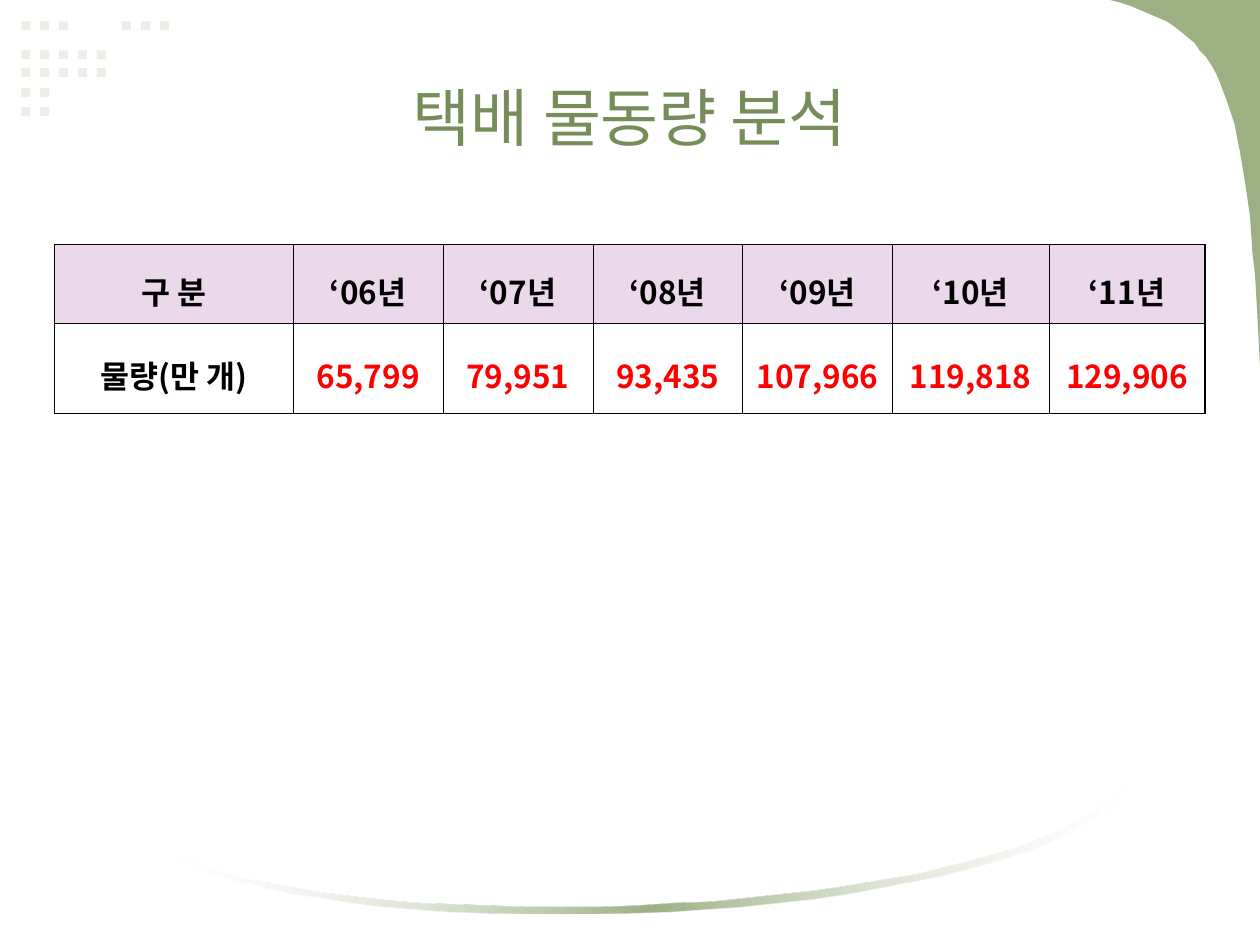
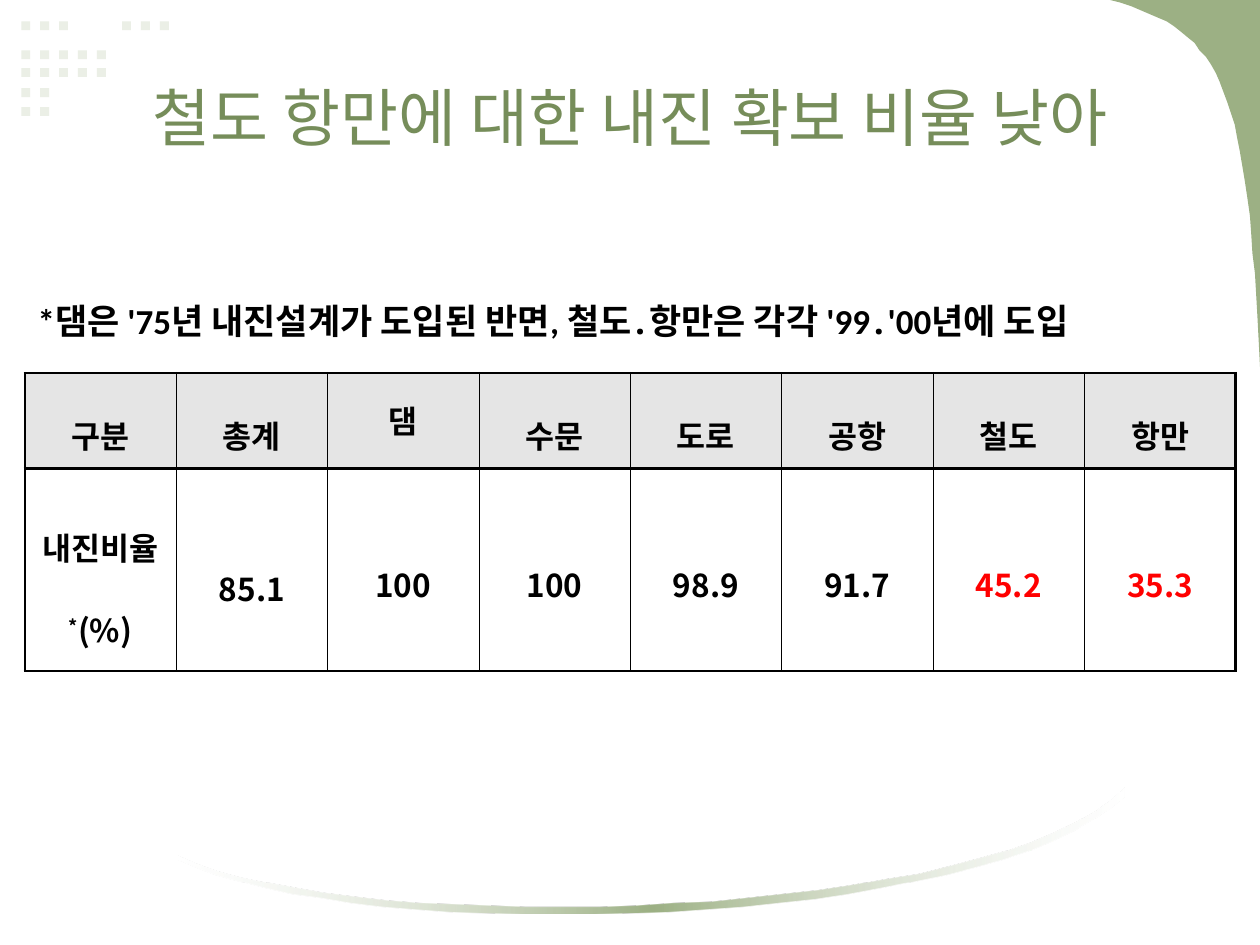
from lxml import etree
from pptx import Presentation
from pptx.dml.color import RGBColor
from pptx.enum import shapes, text
from pptx.oxml import parse_xml
from pptx.oxml.ns import nsdecls, qn
from pptx.util import Pt

# Shared style
SANS, LATIN = "Noto Sans CJK KR", "Calibri"
GREEN, PALE, OLIVE = "9CB084", "EBEFE6", "768D5A"
BLACK, RED, WHITE = "000000", "FF0000", "FFFFFF"
THIN, THICK, RULE = 0.28, 1.7, 1.98

# Content: each cell is (text, line spacing, colour)
VOLUME = {
    "title": "택배 물동량 분석",
    "at": (31, 139.7),
    "cols": [136.6] + [85.6] * 4 + [89.4] * 2,
    "rows": [45, 51.4],
    "head": "ECD8EB",
    "lines": {"L": THIN, "R": THICK, "T": THIN, "B": THIN, "mid": THIN},
    "cells": [
        [(name, 1.3, BLACK) for name in
         ("구 분", "‘06년", "‘07년", "‘08년", "‘09년", "‘10년", "‘11년")],
        [("물량(만 개)", 1.3, BLACK)] + [(sum_, 1.3, RED) for sum_ in
         ("65,799", "79,951", "93,435", "107,966", "119,818", "129,906")],
    ],
}
QUAKE = {
    "title": "철도 항만에 대한 내진 확보 비율 낮아",
    "note": "*댐은 '75년 내진설계가 도입된 반면, 철도․항만은 각각 '99․'00년에 도입",
    "at": (14.2, 213.2),
    "cols": [86.5] * 8,
    "rows": [54.4, 115.8],
    "head": "E5E5E5",
    "lines": {"L": THICK, "R": THICK, "T": THICK, "B": THICK, "mid": RULE},
    "cells": [
        [(name, 0.9 if name == "댐" else 1.6, BLACK) for name in
         ("구분", "총계", "댐", "수문", "도로", "공항", "철도", "항만")],
        [(("내진비율", "*", "(%)"), 1.8, BLACK), ("85.1", 1.8, BLACK),
         ("100", 1.6, BLACK), ("100", 1.6, BLACK), ("98.9", 1.6, BLACK),
         ("91.7", 1.6, BLACK), ("45.2", 1.6, RED), ("35.3", 1.6, RED)],
    ],
}

# Rows of dots: left, top, count
DOTS = [(12.2, 12.2, 3), (69.8, 12.2, 3), (12.2, 28.8, 5),
        (12.2, 38.9, 5), (12.2, 50.4, 2), (12.2, 61.2, 2)]
DOT, PITCH = 5.1, 10.8

# Outlines, on a grid of 0.72 points
GRID = 0.72
CORNER = [
    (881, 0), (1000, 0), (1000, 291), (999, 271), (998, 252), (997, 234),
    (996, 217), (994, 201), (993, 185), (992, 171), (990, 157), (988, 144),
    (986, 132), (984, 120), (982, 110), (980, 99), (977, 90), (974, 81),
    (971, 73), (968, 65), (965, 58), (961, 51), (957, 45), (952, 40),
    (948, 34), (943, 30), (937, 25), (932, 21), (926, 17), (919, 14),
    (912, 11), (905, 8), (898, 5), (889, 2)]
SWOOSH = [
    (892, 625), (892, 632), (881, 641), (867, 650), (852, 659), (835, 667),
    (816, 675), (795, 682), (773, 688), (750, 694), (725, 699), (700, 704),
    (673, 709), (646, 713), (617, 716), (589, 719), (560, 721), (531, 723),
    (501, 724), (472, 725), (443, 725), (414, 725), (385, 724), (357, 723),
    (330, 721), (304, 719), (279, 716), (255, 712), (232, 709), (210, 704),
    (191, 699), (172, 694), (156, 688), (142, 682), (142, 679), (156, 685),
    (173, 691), (192, 696), (212, 700), (234, 704), (257, 708), (281, 711),
    (307, 714), (333, 716), (361, 717), (389, 718), (417, 719), (446, 719),
    (476, 719), (505, 718), (534, 716), (564, 715), (593, 712), (621, 709),
    (649, 706), (676, 702), (703, 697), (729, 693), (753, 687), (776, 681),
    (798, 675), (818, 668), (837, 660), (854, 652), (868, 644), (881, 635)]


def tint(fill, code):
    fill.solid()
    fill.fore_color.rgb = RGBColor.from_string(code)


def plain(shape, code):
    tint(shape.fill, code)
    shape.line.fill.background()
    shape.shadow.inherit = False


def write(para, words, size, code, bold=False, face=SANS):
    for part in [words] if isinstance(words, str) else words:
        run = para.add_run()
        run.text = part
        if part == "*":
            run.font._element.set("baseline", "30000")
    for font in [para.font] + [run.font for run in para.runs]:
        font.size, font.bold, font.name = Pt(size), bold, face
        font.color.rgb = RGBColor.from_string(code)
        latin = font._element.find(qn("a:latin"))
        east = etree.Element(qn("a:ea"), typeface=SANS)
        latin.addnext(east)


def label(slide, box, words, size, code, **style):
    frame = slide.shapes.add_textbox(*map(Pt, box)).text_frame
    frame.word_wrap = True
    write(frame.paragraphs[0], words, size, code, **style)
    return frame


def outline(slide, points, code):
    pen = slide.shapes.build_freeform(*points[0], scale=Pt(GRID))
    pen.add_line_segments(points[1:], close=True)
    shape = pen.convert_to_shape()
    plain(shape, code)
    return shape


def fade(shape, code):
    ends = f'<a:srgbClr val="{WHITE}"><a:alpha val="30000"/></a:srgbClr>'
    grad = parse_xml(
        f'<a:gradFill {nsdecls("a")} rotWithShape="1"><a:gsLst>'
        f'<a:gs pos="0">{ends}</a:gs>'
        f'<a:gs pos="50000"><a:srgbClr val="{code}"/></a:gs>'
        f'<a:gs pos="100000">{ends}</a:gs>'
        '</a:gsLst><a:lin ang="0" scaled="0"/></a:gradFill>')
    props = shape._element.spPr
    props.replace(props.find(qn("a:solidFill")), grad)


def border(cell, widths):
    props = cell._tc.get_or_add_tcPr()
    for side, width in widths.items():
        props.append(parse_xml(
            f'<a:ln{side} {nsdecls("a")} w="{Pt(width)}"><a:solidFill>'
            f'<a:srgbClr val="{BLACK}"/></a:solidFill></a:ln{side}>'))


def grid(slide, data):
    cols, rows, lines = data["cols"], data["rows"], data["lines"]
    box = (*data["at"], sum(cols), sum(rows))
    table = slide.shapes.add_table(len(rows), len(cols), *map(Pt, box)).table
    for col, width in zip(table.columns, cols):
        col.width = Pt(width)
    for r, row in enumerate(data["cells"]):
        table.rows[r].height = Pt(rows[r])
        for c, (words, space, code) in enumerate(row):
            cell = table.cell(r, c)
            border(cell, {
                "L": THIN if c else lines["L"],
                "R": lines["R"] if c == len(cols) - 1 else THIN,
                "T": lines["mid"] if r else lines["T"],
                "B": lines["B"] if r else lines["mid"]})
            tint(cell.fill, WHITE if r else data["head"])
            cell.margin_left = cell.margin_right = Pt(1.4)
            cell.margin_top = cell.margin_bottom = Pt(1.4)
            cell.vertical_anchor = text.MSO_ANCHOR.MIDDLE
            para = cell.text_frame.paragraphs[0]
            para.alignment = text.PP_ALIGN.CENTER
            para.line_spacing = space
            write(para, words, 18, code, bold=True)


def frame(deck, title):
    slide = deck.slides.add_slide(deck.slide_layouts[6])
    # Dots, corner and swoosh
    for left, top, count in DOTS:
        for i in range(count):
            box = (left + i * PITCH, top, DOT, DOT)
            plain(slide.shapes.add_shape(
                shapes.MSO_SHAPE.RECTANGLE, *map(Pt, box)), PALE)
    outline(slide, CORNER, GREEN)
    fade(outline(slide, SWOOSH, GREEN), GREEN)
    # Title
    head = label(slide, (36, 21.6, 648, 90), title, 36, OLIVE)
    head.vertical_anchor = text.MSO_ANCHOR.MIDDLE
    head.paragraphs[0].alignment = text.PP_ALIGN.CENTER
    return slide


def main():
    deck = Presentation()
    deck.slide_width, deck.slide_height = Pt(720), Pt(540)
    for data in (VOLUME, QUAKE):
        slide = frame(deck, data["title"])
        grid(slide, data)
        if "note" in data:
            label(slide, (14.4, 167.8, 657.4, 53.3), data["note"], 20, BLACK,
                  bold=True, face=LATIN)
    deck.save("out.pptx")


if __name__ == "__main__":
    main()
